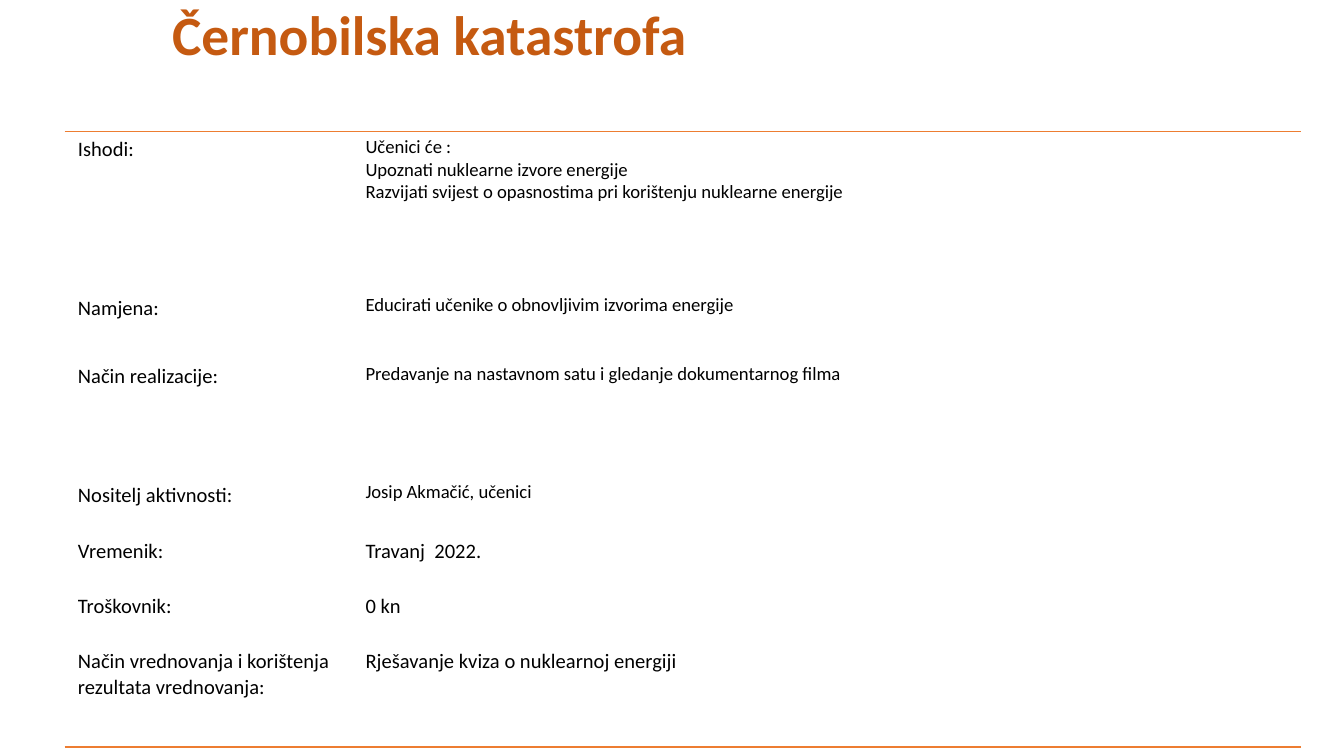
from lxml.etree import SubElement
from pptx import Presentation
from pptx.dml.color import RGBColor
from pptx.enum.text import MSO_ANCHOR, PP_ALIGN
from pptx.oxml.ns import qn
from pptx.util import Inches, Pt

COLORS = {"title": "C55A11", "text": "000000", "rule": "ED7D31"}
FONT = "Calibri"
LABEL_SIZE, DETAIL_SIZE = 11, 10
NO_STYLE_NO_GRID = "{2D5ABB26-0587-4C30-8999-92F81FD0307C}"

TITLE = "Černobilska katastrofa"
# label, detail lines, detail text size, row height
ROWS = [
    ("Ishodi:", ["Učenici će :", "Upoznati nuklearne izvore energije",
                 "Razvijati svijest o opasnostima pri korištenju nuklearne energije"],
     DETAIL_SIZE, 1.18),
    ("Namjena:", ["Educirati učenike o obnovljivim izvorima energije"], DETAIL_SIZE, 0.51),
    ("Način realizacije:", ["Predavanje na nastavnom satu i gledanje dokumentarnog filma"],
     DETAIL_SIZE, 0.88),
    ("Nositelj aktivnosti:", ["Josip Akmačić, učenici"], DETAIL_SIZE, 0.42),
    ("Vremenik:", ["Travanj  2022."], LABEL_SIZE, 0.41),
    ("Troškovnik:", ["0 kn"], LABEL_SIZE, 0.41),
    ("Način vrednovanja i korištenja rezultata vrednovanja:",
     ["Rješavanje kviza o nuklearnoj energiji"], LABEL_SIZE, 0.77),
]
COLUMNS = [2.14, 7.06]


def write(frame, lines, size, color="text", bold=False, spacing=None):
    frame.word_wrap = True
    for index, line in enumerate(lines):
        para = frame.add_paragraph() if index else frame.paragraphs[0]
        para.alignment = PP_ALIGN.LEFT
        para.line_spacing = spacing
        span = para.add_run()
        span.text = line
        span.font.name = FONT
        span.font.size = Pt(size)
        span.font.bold = bold
        span.font.color.rgb = RGBColor.from_string(COLORS[color])


def add_rule(cell, side):
    """Draw one cell border; side is lnT (top) or lnB (bottom)."""
    properties = cell._tc.get_or_add_tcPr()
    line = SubElement(properties, qn(f"a:{side}"), w=str(Pt(1)))
    properties.insert(0, line)
    fill = SubElement(line, qn("a:solidFill"))
    SubElement(fill, qn("a:srgbClr"), val=COLORS["rule"])


def add_title(page):
    title = page.shapes.title
    title.left, title.top = Inches(1.18), Inches(0.06)
    title.width, title.height = Inches(8.81), Inches(0.94)
    frame = title.text_frame
    frame.vertical_anchor = MSO_ANCHOR.TOP
    frame.margin_left = frame.margin_right = Inches(0.1)
    frame.margin_top = 0
    write(frame, [TITLE], 29.7, color="title", bold=True, spacing=0.9)


def add_plan(page):
    heights = [row[-1] for row in ROWS]
    table = page.shapes.add_table(
        len(ROWS), len(COLUMNS), Inches(0.48), Inches(0.98),
        Inches(sum(COLUMNS)), Inches(sum(heights))).table
    table.first_row = table.horz_banding = False
    table._tbl.tblPr.find(qn("a:tableStyleId")).text = NO_STYLE_NO_GRID
    for column, width in zip(table.columns, COLUMNS):
        column.width = Inches(width)

    for index, (label, details, detail_size, height) in enumerate(ROWS):
        row = table.rows[index]
        row.height = Inches(height)
        contents = [([label], LABEL_SIZE), (details, detail_size)]
        for cell, (lines, size) in zip(row.cells, contents):
            cell.fill.background()
            cell.margin_left = cell.margin_right = Inches(0.1)
            cell.margin_top = cell.margin_bottom = Inches(0.04 if size == LABEL_SIZE else 0.03)
            write(cell.text_frame, lines, size)
            if index == 0:
                add_rule(cell, "lnT")
            elif index == len(ROWS) - 1:
                add_rule(cell, "lnB")


def main():
    deck = Presentation()
    deck.slide_width = Inches(10)
    deck.slide_height = deck.slide_width * 9 // 16
    page = deck.slides.add_slide(deck.slide_layouts[5])
    add_plan(page)
    add_title(page)
    deck.save("out.pptx")


if __name__ == "__main__":
    main()
